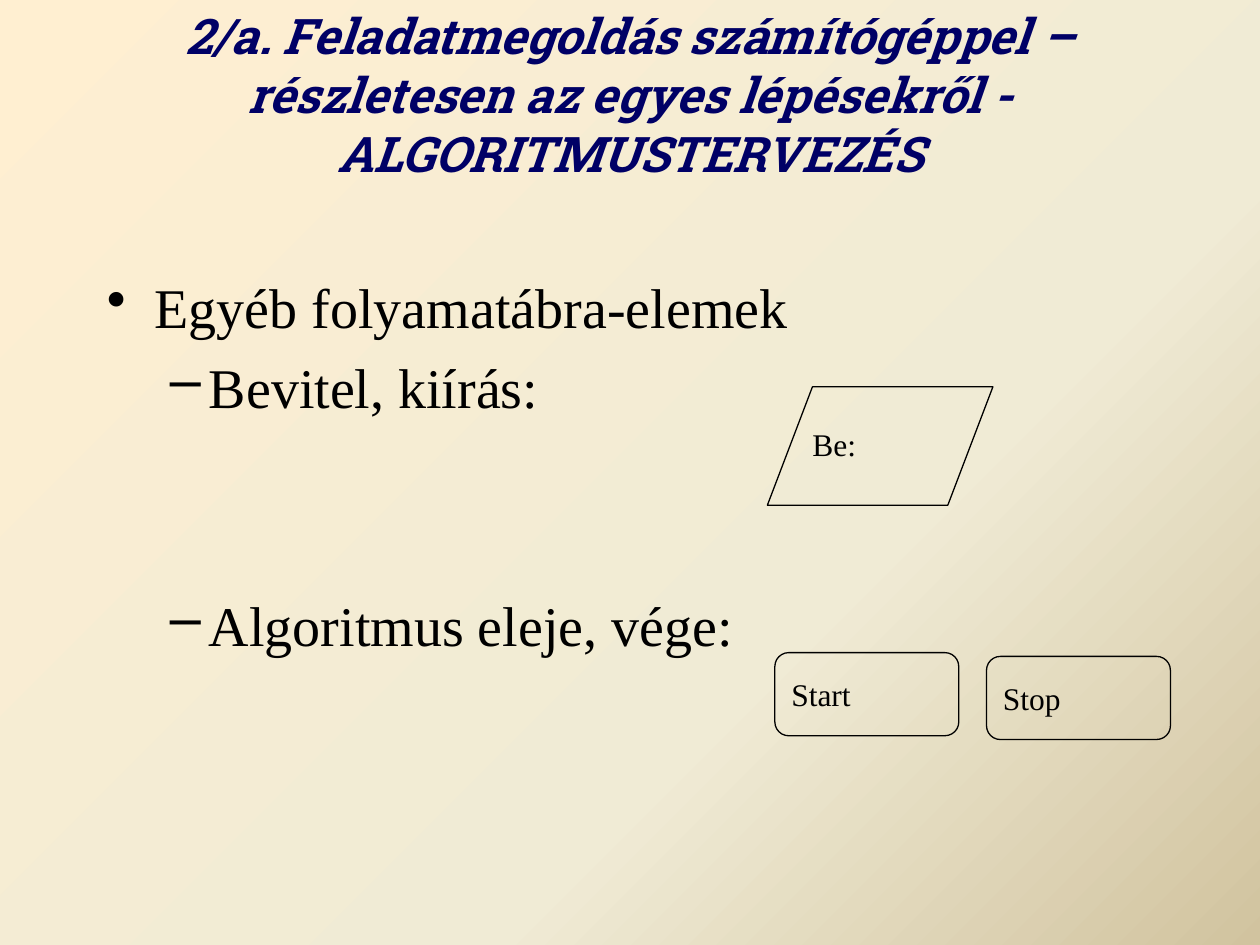
import copy
from dataclasses import dataclass

import pptx
import pptx.dml.color
import pptx.enum.shapes
import pptx.enum.text
import pptx.oxml
import pptx.oxml.ns
import pptx.util

Inches = pptx.util.Inches
Pt = pptx.util.Pt
RGB = pptx.dml.color.RGBColor.from_string
qn = pptx.oxml.ns.qn
Shape = pptx.enum.shapes.MSO_SHAPE
Align = pptx.enum.text.PP_ALIGN
Anchor = pptx.enum.text.MSO_ANCHOR


@dataclass(frozen=True)
class Theme:
    title_font: str = "Roboto Slab"
    body_font: str = "Times New Roman"
    title_color: str = "000066"
    ink: str = "000000"
    title_size: int = 28
    body_size: int = 32
    symbol_size: int = 18
    outline: float = 0.75
    backdrop: tuple = ((0, "FFEFD1"), (65, "F0EBD5"), (100, "D1C39F"))


THEME = Theme()


def paint_background(slide):
    fill = slide.background.fill
    fill.gradient()
    fill.gradient_angle = 315
    stop_list = slide.background._cSld.find(".//" + qn("a:gsLst"))
    stop_list.insert(1, copy.deepcopy(stop_list[0]))
    for stop, (position, color) in zip(fill.gradient_stops, THEME.backdrop):
        stop.position = position / 100
        stop.color.rgb = RGB(color)


def style_text(paragraph, font, size, color, strong=False):
    for run in paragraph.runs:
        run.font.name = font
        run.font.size = Pt(size)
        run.font.color.rgb = RGB(color)
        run.font.bold = run.font.italic = strong


def set_indent(paragraph, left, first):
    properties = paragraph._p.get_or_add_pPr()
    properties.set("marL", str(Inches(left)))
    properties.set("indent", str(Inches(first)))
    return properties


def add_title(slide, wording):
    frame = slide.shapes.add_textbox(
        Inches(0.75), Inches(0.33), Inches(8.5), Inches(0.83)).text_frame
    frame.word_wrap = True
    frame.vertical_anchor = Anchor.MIDDLE
    heading = frame.paragraphs[0]
    heading.text = wording
    heading.alignment = Align.CENTER
    style_text(heading, THEME.title_font, THEME.title_size,
               THEME.title_color, strong=True)


def add_outline(slide, items):
    """Each item is wording, level and space before in points."""
    levels = ((0.38, -0.38, "•"), (0.81, -0.31, "–"))
    frame = slide.shapes.add_textbox(
        Inches(0.75), Inches(2.11), Inches(8.5), Inches(4.81)).text_frame
    frame.word_wrap = True
    frame.text = "\n".join(wording for wording, _, _ in items)
    for item, (_, level, space) in zip(frame.paragraphs, items):
        left, first, mark = levels[level]
        item.level = level
        item.space_before = Pt(space)
        properties = set_indent(item, left, first)
        bullet = pptx.oxml.parse_xml(
            f'<a:buChar {pptx.oxml.ns.nsdecls("a")} char="{mark}"/>')
        properties.append(bullet)
        style_text(item, THEME.body_font, THEME.body_size, THEME.ink)


def add_symbol(slide, kind, label, left, top, width, height):
    symbol = slide.shapes.add_shape(
        kind, Inches(left), Inches(top), Inches(width), Inches(height))
    symbol.shadow.inherit = False
    symbol.fill.background()
    symbol.line.color.rgb = RGB(THEME.ink)
    symbol.line.width = Pt(THEME.outline)
    frame = symbol.text_frame
    frame.word_wrap = False
    frame.vertical_anchor = Anchor.MIDDLE
    caption = frame.paragraphs[0]
    caption.text = label
    caption.alignment = Align.LEFT
    set_indent(caption, 0.38, -0.38)
    style_text(caption, THEME.body_font, THEME.symbol_size, THEME.ink)
    return symbol


def main():
    deck = pptx.Presentation()
    deck.slide_width, deck.slide_height = Inches(10), Inches(7.5)
    slide = deck.slides.add_slide(deck.slide_layouts[6])
    paint_background(slide)

    # Heading and list
    add_title(slide, "2/a. Feladatmegoldás számítógéppel – részletesen "
                     "az egyes lépésekről - ALGORITMUSTERVEZÉS")
    add_outline(slide, (
        ("Egyéb folyamatábra-elemek", 0, 4),
        ("Bevitel, kiírás:", 1, 7.5),
        ("Algoritmus eleje, vége:", 1, 97.5),
    ))

    # Input symbol
    entry = add_symbol(slide, Shape.FLOWCHART_DATA, "Be:",
                       6.09, 3.07, 1.79, 0.94)
    entry.text_frame.margin_left = 0
    entry.text_frame.margin_top = Inches(0.01)

    # Start and stop symbols
    for label, left, top in (("Start", 6.15, 5.18), ("Stop", 7.83, 5.21)):
        add_symbol(slide, Shape.FLOWCHART_ALTERNATE_PROCESS, label,
                   left, top, 1.46, 0.66)

    deck.save("out.pptx")


if __name__ == "__main__":
    main()
